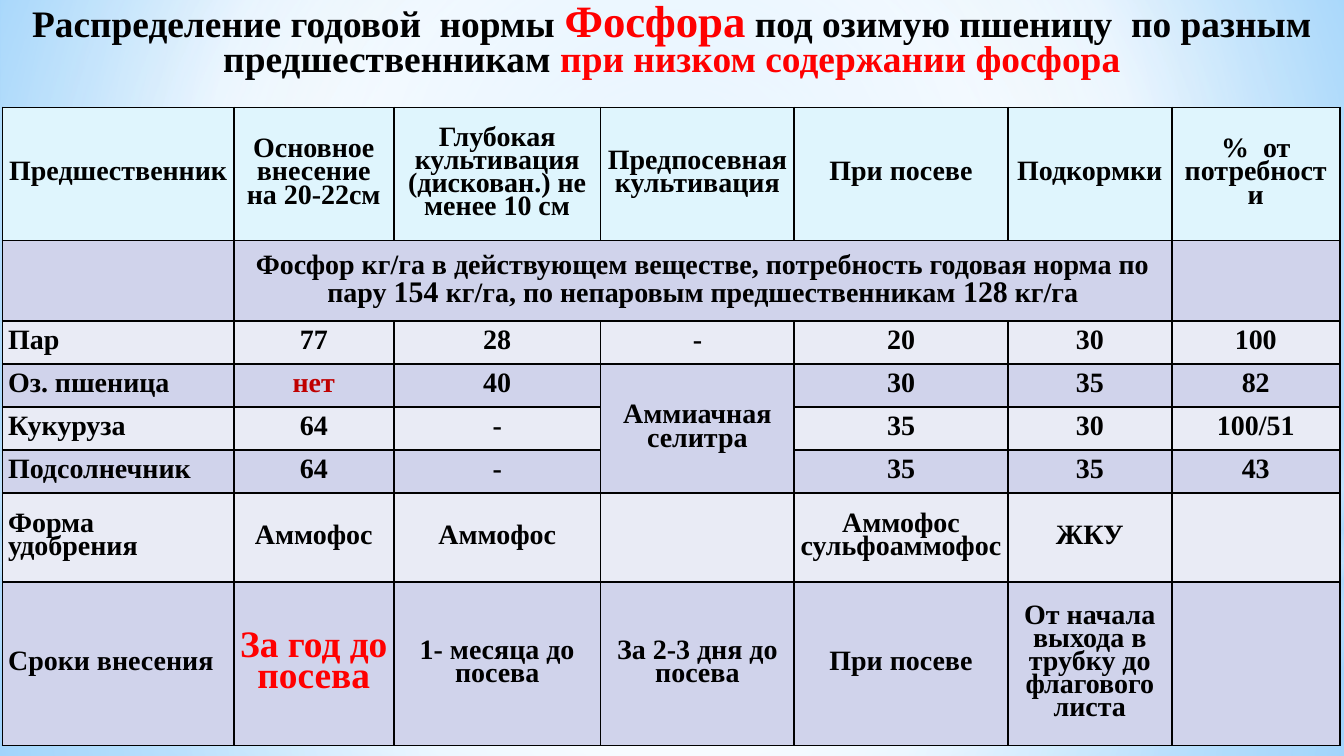
"""Build a slide on sharing the yearly phosphorus rate for winter wheat by preceding crop."""
from lxml import etree
from pptx import Presentation, util as u
from pptx.dml.color import RGBColor
from pptx.enum import shapes, text
from pptx.oxml import ns

THEME = {
    "font": "Times New Roman", "ink": "000000", "red": "FF0000", "dark red": "C00000",
    "header": "DFF5FD", "bands": ("D0D3EB", "E9EBF5"), "border": "000000",
    "body": 15, "figure": 16, "large": 20, "accent": 24,
    "white": "FFFFFF", "mist": "B4DCFA", "sky": "9ED5FF", "blue": "5BB9FF",
}
WIDTH = 10
HEIGHT = WIDTH * 9 / 16
INSET, TIGHT = 0.04, 0.75

TITLE = [
    ("Распределение годовой  нормы ", {}),
    ("Фосфора", {"size": "accent", "color": "red"}),
    (" под озимую пшеницу  по разным предшественникам ", {}),
    ("при низком содержании фосфора", {"color": "red"}),
]
DEMAND = [
    ("Фосфор кг/га в действующем веществе, потребность годовая норма по пару ", {}),
    ("154 ", {"size": "figure"}),
    ("кг/га, по непаровым предшественникам ", {}),
    ("128", {"size": "figure"}),
    (" кг/га", {}),
]
ROWS = [
    ["Предшественник", "Основное внесение\nна 20-22см",
     "Глубокая культивация (дискован.) не менее 10 см", "Предпосевная культивация",
     "При посеве", "Подкормки", "%  от потребности"],
    ["", DEMAND, "", "", "", "", ""],
    ["Пар", "77", "28", "-", "20", "30", "100"],
    ["Оз. пшеница", [("нет", {"color": "dark red"})], "40", "Аммиачная селитра", "30", "35", "82"],
    ["Кукуруза", "64", "-", "", "35", "30", "100/51"],
    ["Подсолнечник", "64", "-", "", "35", "35", "43"],
    ["Форма удобрения", "Аммофос", "Аммофос", "", "Аммофос\nсульфоаммофос", "ЖКУ", ""],
    ["Сроки внесения", [("За год до посева", {"size": "large", "color": "red"})],
     "1- месяца до посева", "За 2-3 дня до посева", "При посеве",
     "От начала выхода в трубку до флагового листа", ""],
]
COLUMN_WIDTHS = [1.72, 1.19, 1.54, 1.44, 1.59, 1.22, 1.25]
ROW_HEIGHTS = [0.99, 0.6, 0.32, 0.32, 0.32, 0.32, 0.66, 1.22]
MERGES = [((1, 1), (1, 5)), ((3, 3), (5, 3))]

BACKGROUND = ([(0, "sky", 100), (60, "white", 100), (100, "blue", 100)], (20, 10, 20, 60))
CENTER = (50, 50, 50, 50)
GLOWS = [
    ("RECTANGLE", 4.19, 1.44, [(0, "white", 91), (37, "white", 76), (100, "mist", 79)], CENTER),
    ("RECTANGLE", 0, 4.19, [(0, "white", 89), (48, "white", 62), (100, "mist", 79)], CENTER),
    ("RECTANGLE", 3.09, 1.88, [(0, "white", 0), (29, "white", 30), (45, "mist", 40),
                               (55, "white", 26), (65, "mist", 60), (100, "white", 0)], None),
    ("OVAL", 1.31, 4.19, [(0, "white", 100), (56, "white", 0)], CENTER),
]


def child(parent, tag, **attributes):
    """Append a DrawingML element to its parent."""
    values = {key: str(value) for key, value in attributes.items()}
    return etree.SubElement(parent, ns.qn(tag), values)


def paint_gradient(fill, element, stops, focus):
    """Give an element a circular gradient, or a vertical one when it has no focus."""
    fill.solid()
    solid = element.find(".//" + ns.qn("a:solidFill"))
    gradient = etree.Element(ns.qn("a:gradFill"), rotWithShape="1")
    stop_list = child(gradient, "a:gsLst")
    for position, color, opacity in stops:
        stop = child(stop_list, "a:gs", pos=position * 1000)
        child(child(stop, "a:srgbClr", val=THEME[color]), "a:alpha", val=opacity * 1000)
    if focus:
        circle = child(gradient, "a:path", path="circle")
        child(circle, "a:fillToRect", **{side: share * 1000 for side, share in zip("ltrb", focus)})
    else:
        child(gradient, "a:lin", ang=90 * 60000, scaled=0)
    solid.getparent().replace(solid, gradient)


def write(frame, content, size="body", color="ink", align=text.PP_ALIGN.CENTER, spacing=TIGHT):
    """Fill a text frame with plain lines or with one paragraph of formatted spans."""
    lines = [[(line, {})] for line in content.split("\n")] if isinstance(content, str) else [content]
    for index, spans in enumerate(lines):
        para = frame.add_paragraph() if index else frame.paragraphs[0]
        para.alignment, para.line_spacing = align, spacing
        for words, style in spans:
            if words:
                span = para.add_run()
                span.text = words
                span.font.name, span.font.bold = THEME["font"], True
                span.font.size = u.Pt(THEME[style.get("size", size)])
                span.font.color.rgb = RGBColor.from_string(THEME[style.get("color", color)])


def add_borders(cell):
    """Draw a thin line on each side of a table cell."""
    properties = cell._tc.get_or_add_tcPr()
    for index, side in enumerate("LRTB"):
        line = etree.Element(ns.qn(f"a:ln{side}"), w=str(u.Pt(1)))
        child(child(line, "a:solidFill"), "a:srgbClr", val=THEME["border"])
        properties.insert(index, line)


def add_backdrop(page):
    """Paint the background and lay the soft glows over it."""
    paint_gradient(page.background.fill, page.element, *BACKGROUND)
    for kind, top, height, stops, focus in GLOWS:
        glow = page.shapes.add_shape(getattr(shapes.MSO_SHAPE, kind), 0, u.Inches(top),
                                     u.Inches(WIDTH), u.Inches(height))
        glow.shadow.inherit = False
        glow.line.fill.background()
        paint_gradient(glow.fill, glow.element, stops, focus)


def add_rates(page):
    """Add the table of phosphorus rates."""
    frame = page.shapes.add_table(len(ROWS), len(COLUMN_WIDTHS), u.Inches(0.02), u.Inches(0.8),
                                  u.Inches(sum(COLUMN_WIDTHS)), u.Inches(sum(ROW_HEIGHTS)))
    table = frame.table
    for column, width in zip(table.columns, COLUMN_WIDTHS):
        column.width = u.Inches(width)
    for r, (height, contents) in enumerate(zip(ROW_HEIGHTS, ROWS)):
        table.rows[r].height = u.Inches(height)
        for c, content in enumerate(contents):
            cell = table.cell(r, c)
            cell.margin_left = cell.margin_right = u.Inches(INSET)
            cell.margin_top = cell.margin_bottom = u.Inches(INSET)
            cell.vertical_anchor = text.MSO_ANCHOR.MIDDLE
            cell.fill.solid()
            band = THEME["bands"][(r + 1) % 2] if r else THEME["header"]
            cell.fill.fore_color.rgb = RGBColor.from_string(band)
            add_borders(cell)
            align = text.PP_ALIGN.LEFT if r and c == 0 else text.PP_ALIGN.CENTER
            write(cell.text_frame, content, align=align, spacing=0.85 if r == 1 else TIGHT)
    for first, last in MERGES:
        table.cell(*first).merge(table.cell(*last))


def add_title(page):
    """Add the heading across the top of the slide."""
    box = page.shapes.add_textbox(0, 0, u.Inches(WIDTH), u.Inches(0.63))
    frame = box.text_frame
    frame.word_wrap = True
    frame.margin_left = frame.margin_right = u.Inches(0.07)
    frame.margin_top = frame.margin_bottom = u.Inches(INSET)
    write(frame, TITLE, size="large")


def main():
    """Build the deck and save it."""
    deck = Presentation()
    deck.slide_width, deck.slide_height = u.Inches(WIDTH), u.Inches(HEIGHT)
    page = deck.slides.add_slide(deck.slide_layouts[6])
    add_backdrop(page)
    add_rates(page)
    add_title(page)
    deck.save("out.pptx")


if __name__ == "__main__":
    main()
